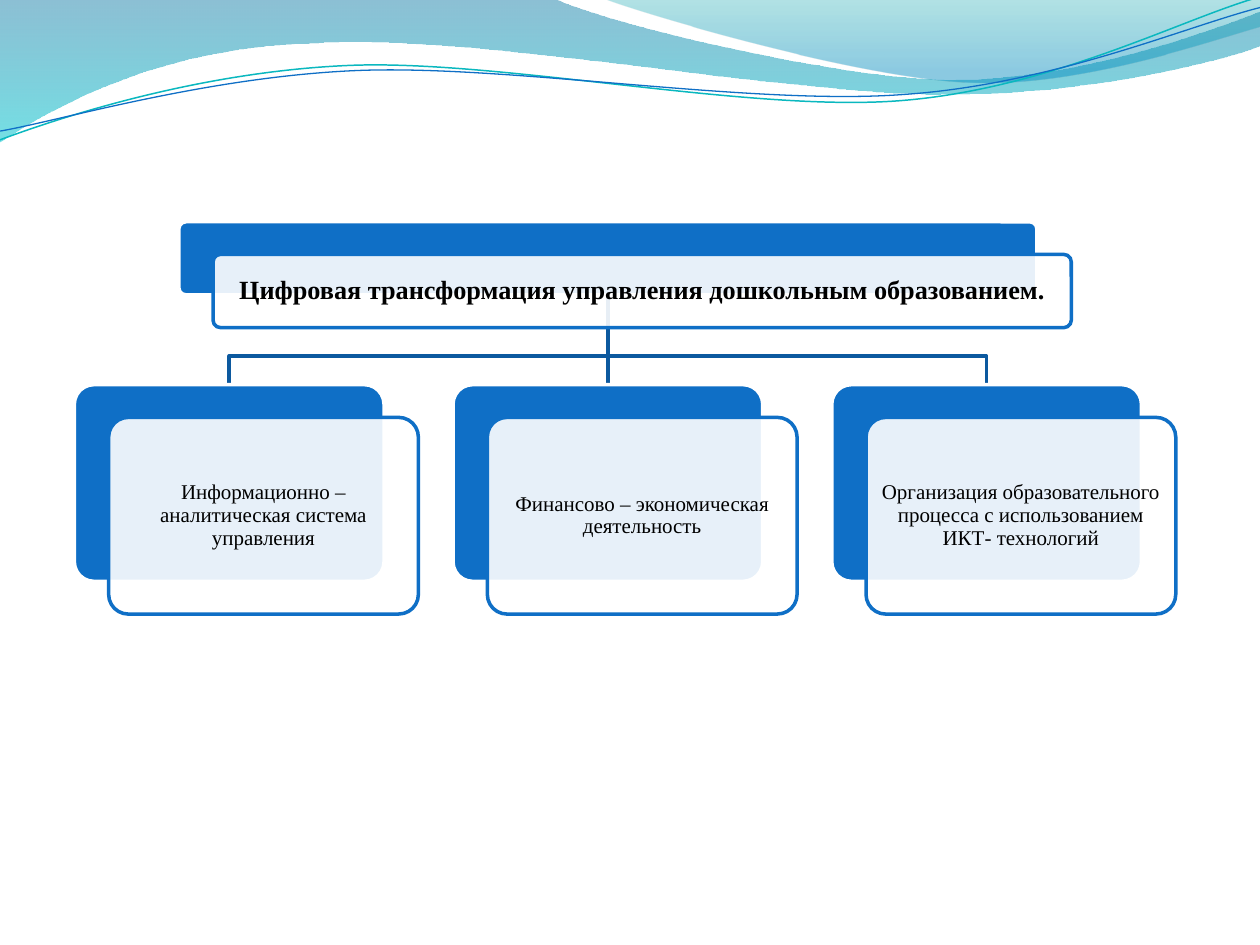
import math

from lxml import etree
from pptx import Presentation
from pptx.dml.color import RGBColor
from pptx.enum import shapes, text
from pptx.oxml import ns
from pptx.util import Pt

COLORS = {
    "blue": "0F6FC6", "dark blue": "0C599F", "teal": "0AB8BF",
    "white": "FFFFFF", "black": "000000",
    "wave top": "0074A1", "wave bottom": "00C6CF",
    "crest top": "00A1A9", "crest bottom": "008BBF",
}
FONT = "Times New Roman"

# An outline is a start point and segments of one point (a straight line)
# or three points (a Bézier curve).
WAVE = [(0, 0), [
    [(316.8, -0.7)],
    [(342.7, 12.2), (478.1, 45.4), (545.8, 45.4)],
    [(614.2, 45.4), (689.8, 18.7), (720, 6.5)],
    [(720.7, 25.9)],
    [(707.8, 31.7), (626.4, 54.7), (537.1, 54)],
    [(447.8, 54), (275, 20.2), (185, 24.5)],
    [(92.9, 25.9), (33.1, 59.8), (-0.7, 81.4)],
    [(0, 0)],
]]
CREST = [(344.9, -0.7), [
    [(366.5, 7.9), (491, 44.6), (553.7, 46.8)],
    [(616.3, 49.7), (691.9, 23), (720, 15.1)],
    [(720, 0)],
    [(344.9, -0.7)],
]]
TEAL_LINE = [(0, 79.9), [
    [(34.6, 67), (113.8, 41), (199.4, 37.4)],
    [(284.4, 33.8), (427, 64.1), (513.4, 57.6)],
    [(599.8, 51.1), (675.4, 10.8), (718.6, -1.4)],
]]
BLUE_LINE = [(0, 74.9), [
    [(33.8, 69.1), (118.1, 43.9), (203.8, 40.3)],
    [(290.2, 36.7), (429.8, 60.5), (516.2, 54)],
    [(601.9, 48.2), (677.5, 15.1), (720, 4.3)],
]]
LINE_TILT = -2.7
LINE_PIVOT = (359.4, 41.8)

HEADING = "Цифровая трансформация управления дошкольным образованием."
BRANCHES = [
    "Информационно – аналитическая система управления",
    "Финансово – экономическая деятельность",
    "Организация образовательного процесса с использованием ИКТ- технологий",
]
CENTER = 347.4
HEADING_TOP, HEADING_WIDTH, HEADING_HEIGHT = 126.7, 490.4, 41.8
BRANCH_TOP, BRANCH_WIDTH, BRANCH_HEIGHT, BRANCH_STEP = 219.8, 177, 112.4, 216.4
FRONT_SHIFT_X, FRONT_SHIFT_Y = 19.6, 18.7
FORK_Y = 203.5


def color(name):
    return RGBColor.from_string(COLORS[name])


def set_line(shape, name, width):
    shape.line.color.rgb = color(name)
    shape.line.width = Pt(width)


def set_opacity(fill_element, percents):
    """Give each colour of the fill, in order, its opacity."""
    for element, percent in zip(fill_element.iter(ns.qn("a:srgbClr")), percents):
        alpha = etree.SubElement(element, ns.qn("a:alpha"))
        alpha.set("val", str(percent * 1000))


def turn(point, degrees):
    """Turn a point clockwise about the middle of the tilted lines."""
    sine, cosine = math.sin(math.radians(degrees)), math.cos(math.radians(degrees))
    x, y = point[0] - LINE_PIVOT[0], point[1] - LINE_PIVOT[1]
    return LINE_PIVOT[0] + x * cosine - y * sine, LINE_PIVOT[1] + x * sine + y * cosine


def bend_segments(shape, segments):
    """Turn each run of three straight segments that stands for a curve into one."""
    steps = iter(list(shape._element.iter(ns.qn("a:lnTo"))))
    for segment in segments:
        group = [next(steps) for _ in segment]
        if len(group) == 3:
            curve = etree.Element(ns.qn("a:cubicBezTo"))
            group[0].addprevious(curve)
            for step in group:
                curve.append(step[0])
                step.getparent().remove(step)


def add_outline(slide, start, segments, close):
    points = [(Pt(x), Pt(y)) for segment in segments for x, y in segment]
    builder = slide.shapes.build_freeform(Pt(start[0]), Pt(start[1]))
    builder.add_line_segments(points, close=close)
    shape = builder.convert_to_shape()
    bend_segments(shape, segments)
    shape.shadow.inherit = False
    return shape


def add_wave(slide, outline, stops):
    """Fill an outline from top to bottom; stops are (position, colour, opacity)."""
    shape = add_outline(slide, *outline, close=True)
    shape.line.fill.background()
    shape.fill.gradient()
    shape.fill.gradient_angle = 270
    for gradient_stop, (position, name, _) in zip(shape.fill.gradient_stops, stops):
        gradient_stop.position = position
        gradient_stop.color.rgb = color(name)
    gradient = shape._element.spPr.find(ns.qn("a:gradFill"))
    set_opacity(gradient, [opacity for _, _, opacity in stops])


def add_stroke(slide, outline, name, width):
    shape = add_outline(slide, *outline, close=False)
    shape.fill.background()
    set_line(shape, name, width)
    return shape


def add_tilted_stroke(slide, outline, name, width):
    start, segments = outline
    level = [[turn(point, -LINE_TILT) for point in segment] for segment in segments]
    stroke = add_stroke(slide, (turn(start, -LINE_TILT), level), name, width)
    stroke.rotation = LINE_TILT


def add_card(slide, left, top, width, height, fill, line):
    card = slide.shapes.add_shape(shapes.MSO_SHAPE.ROUNDED_RECTANGLE,
                                  Pt(left), Pt(top), Pt(width), Pt(height))
    card.adjustments[0] = 0.1
    card.shadow.inherit = False
    card.fill.solid()
    card.fill.fore_color.rgb = color(fill)
    set_line(card, line, 2)
    return card


def write(card, words, size, bold, inset):
    frame = card.text_frame
    frame.text = words
    frame.word_wrap = True
    frame.vertical_anchor = text.MSO_ANCHOR.MIDDLE
    frame.margin_left = frame.margin_right = Pt(inset)
    frame.margin_top = frame.margin_bottom = Pt(inset)
    paragraph = frame.paragraphs[0]
    paragraph.alignment = text.PP_ALIGN.CENTER
    paragraph.line_spacing = 0.9
    font = paragraph.runs[0].font
    font.name, font.size, font.bold = FONT, Pt(size), bold
    font.color.rgb = color("black")


def add_node(slide, center, top, width, height, words, size, bold, inset):
    """Draw a blue back card with a shifted, translucent text card; return the back."""
    left = center - width / 2
    back = add_card(slide, left, top, width, height, "blue", "white")
    front = add_card(slide, left + FRONT_SHIFT_X, top + FRONT_SHIFT_Y,
                     width, height, "white", "blue")
    set_opacity(front._element.spPr.find(ns.qn("a:solidFill")), [90])
    write(front, words, size, bold, inset)
    return back


def add_straight_link(slide, upper, lower):
    link = slide.shapes.add_connector(shapes.MSO_CONNECTOR.STRAIGHT, 0, 0, 0, 0)
    link.begin_connect(upper, 2)
    link.end_connect(lower, 0)
    set_line(link, "dark blue", 2)
    etree.SubElement(link._element.spPr, ns.qn("a:effectLst"))
    return link


def add_bent_link(slide, center):
    start = (CENTER, HEADING_TOP + HEADING_HEIGHT)
    corners = [[(CENTER, FORK_Y)], [(center, FORK_Y)], [(center, BRANCH_TOP)]]
    return add_stroke(slide, (start, corners), "dark blue", 2)


def add_diagram(slide):
    heading = add_node(slide, CENTER, HEADING_TOP, HEADING_WIDTH, HEADING_HEIGHT,
                       HEADING, 15, True, 4.3)
    links = []
    for index, words in enumerate(BRANCHES):
        center = CENTER + (index - 1) * BRANCH_STEP
        branch = add_node(slide, center, BRANCH_TOP, BRANCH_WIDTH, BRANCH_HEIGHT,
                          words, 12, False, 3.6)
        links.append(add_straight_link(slide, heading, branch) if center == CENTER
                     else add_bent_link(slide, center))
    for link in links:  # links run behind the cards
        heading._element.addprevious(link._element)


def main():
    presentation = Presentation()
    presentation.slide_width, presentation.slide_height = Pt(720), Pt(540)
    slide = presentation.slides.add_slide(presentation.slide_layouts[6])
    add_wave(slide, WAVE, [(0, "wave top", 45), (1, "wave bottom", 55)])
    add_wave(slide, CREST, [(0, "crest top", 30), (0.8, "crest bottom", 45)])
    add_tilted_stroke(slide, TEAL_LINE, "teal", 0.85)
    add_tilted_stroke(slide, BLUE_LINE, "blue", 0.75)
    add_diagram(slide)
    presentation.save("out.pptx")


if __name__ == "__main__":
    main()
